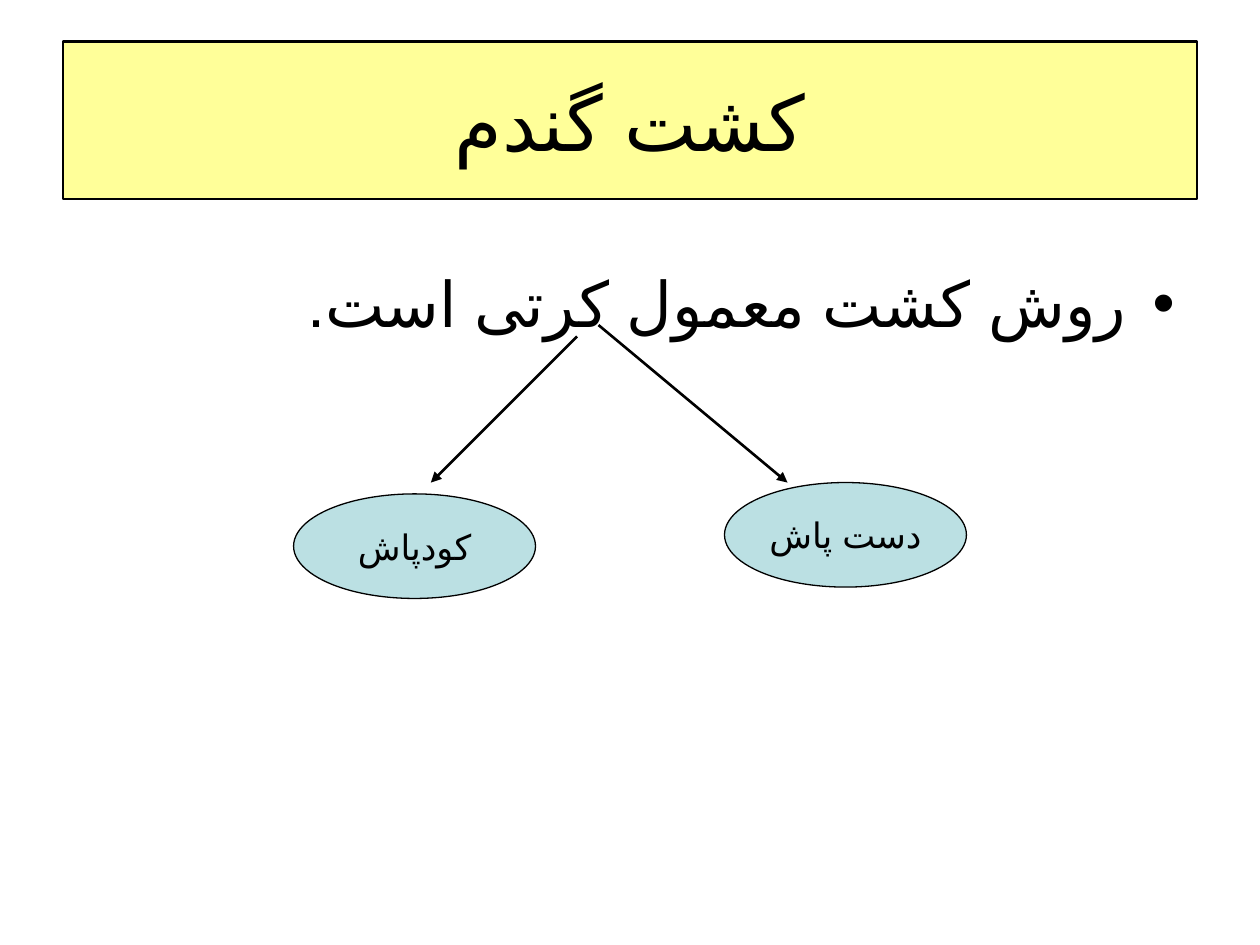
from dataclasses import dataclass

from lxml import etree
from pptx import Presentation
from pptx.dml.color import RGBColor
from pptx.enum import lang, shapes, text
from pptx.oxml import ns
from pptx.util import Inches, Pt


@dataclass(frozen=True)
class Theme:
    font: str = "Arial"
    ink: RGBColor = RGBColor(0, 0, 0)
    band: RGBColor = RGBColor(0xFF, 0xFF, 0x99)
    oval: RGBColor = RGBColor(0xBB, 0xE0, 0xE3)
    title: int = 44
    body: int = 36
    label: int = 20


theme = Theme()
align = text.PP_ALIGN


def write(shape, words, size, side, rtl=False):
    """Put one run of Persian text in the shape; return its paragraph."""
    para = shape.text_frame.paragraphs[0]
    para.alignment = side
    if rtl:
        para._p.get_or_add_pPr().set("rtl", "1")
    run = para.add_run()
    run.text = words
    run.font.size = Pt(size)
    run.font.name = theme.font
    run.font.color.rgb = theme.ink
    run.font.language_id = lang.MSO_LANGUAGE_ID.FARSI
    etree.SubElement(run.font._element, ns.qn("a:cs"), typeface=theme.font)
    return para


def draw(kind, left, top, width, height, fill, line):
    """Add a filled and outlined shape with its text in the middle."""
    shape = slide.shapes.add_shape(
        kind, Inches(left), Inches(top), Inches(width), Inches(height))
    shape.shadow.inherit = False
    shape.fill.solid()
    shape.fill.fore_color.rgb = fill
    shape.line.color.rgb = theme.ink
    shape.line.width = Pt(line)
    shape.text_frame.vertical_anchor = text.MSO_ANCHOR.MIDDLE
    return shape


deck = Presentation()
deck.slide_width = Inches(10)
deck.slide_height = Inches(7.5)
slide = deck.slides.add_slide(deck.slide_layouts[6])

# Title band
band = draw(shapes.MSO_SHAPE.RECTANGLE, 0.5, 0.33, 9, 1.25, theme.band, 1.5)
band.text_frame.word_wrap = True
write(band, "کشت گندم", theme.title, align.CENTER, rtl=True)

# Bulleted sentence
body = slide.shapes.add_textbox(Inches(0.42), Inches(2.05), Inches(9), Inches(4.95))
body.text_frame.word_wrap = True
para = write(body, "روش کشت معمول کرتی است.", theme.body, align.RIGHT, rtl=True)
para.space_before = Pt(0.2 * theme.body)
props = para._p.get_or_add_pPr()
props.set("marL", str(Inches(0.38)))
props.set("indent", str(Inches(-0.38)))
etree.SubElement(props, ns.qn("a:buFont"), typeface=theme.font)
etree.SubElement(props, ns.qn("a:buChar"), char="•")

# Arrows from the sentence to the two methods
for x1, y1, x2, y2 in ((4.58, 2.67, 3.42, 3.83), (4.75, 2.58, 6.25, 3.83)):
    arrow = slide.shapes.add_connector(
        shapes.MSO_CONNECTOR.STRAIGHT,
        Inches(x1), Inches(y1), Inches(x2), Inches(y2))
    arrow.line.color.rgb = theme.ink
    arrow.line.width = Pt(1.5)
    etree.SubElement(arrow.line._get_or_add_ln(), ns.qn("a:tailEnd"), type="triangle")
    etree.SubElement(arrow._element.spPr, ns.qn("a:effectLst"))

# Sowing methods
for words, left, top in (("کودپاش", 2.33, 3.92), ("دست پاش", 5.75, 3.83)):
    oval = draw(shapes.MSO_SHAPE.OVAL, left, top, 1.92, 0.83, theme.oval, 0.75)
    oval.text_frame.word_wrap = False
    write(oval, words, theme.label, align.CENTER)

deck.save("out.pptx")
